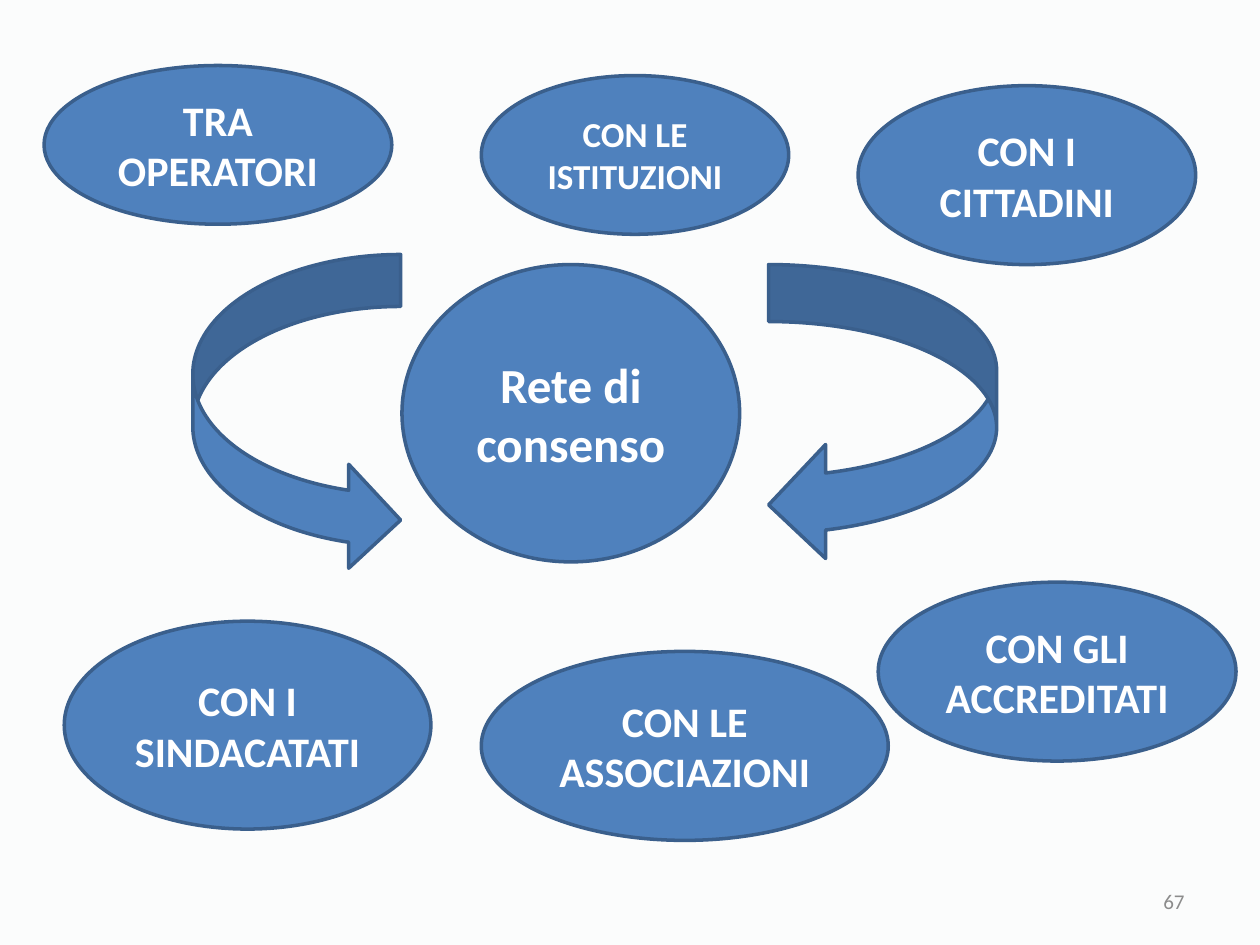
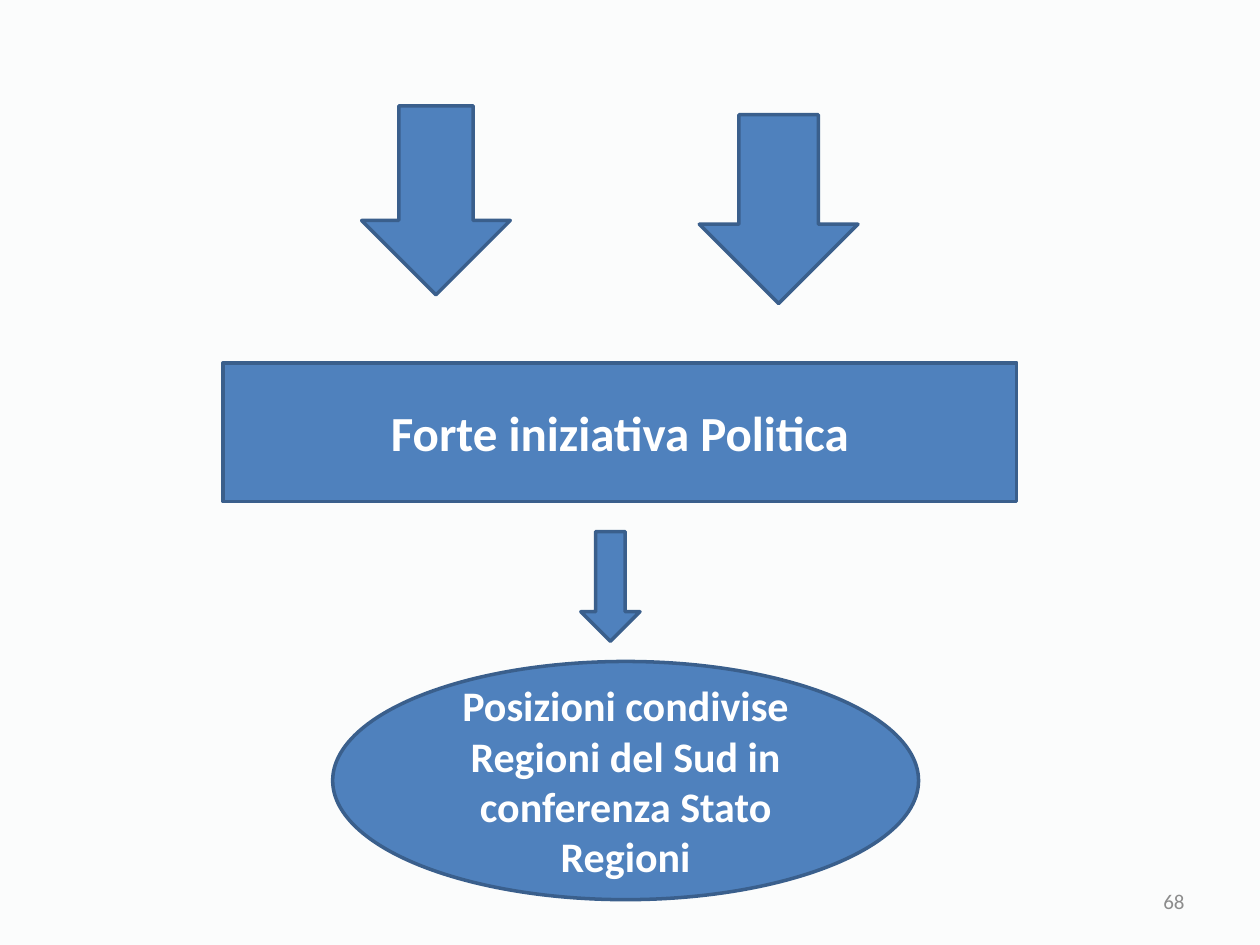
from pptx import Presentation
from pptx.dml.color import RGBColor
from pptx.enum.shapes import MSO_SHAPE as Preset
from pptx.enum.text import MSO_ANCHOR as Anchor, PP_ALIGN as Align
from pptx.util import Inches, Pt

COLORS = {
    "background": "FBFCFC",
    "node": "4F81BD",
    "outline": "3A5F8C",
    "label": "FFFFFF",
    "number": "8C8C8C",
}
FONT = "Calibri"

PARTNERS = [
    (0.35, 0.52, 2.76, 1.26, ["TRA OPERATORI"], 24),
    (3.82, 0.6, 2.44, 1.26, ["CON LE ISTITUZIONI"], 20),
    (6.81, 0.68, 2.68, 1.42, ["CON I CITTADINI"], 24),
    (0.51, 4.93, 2.91, 1.65, ["CON I", "SINDACATATI"], 24),
    (3.82, 5.17, 3.23, 1.5, ["CON LE ASSOCIAZIONI"], 24),
    (6.97, 4.62, 2.84, 1.42, ["CON GLI ACCREDITATI"], 24),
]


def color(key):
    return RGBColor.from_string(COLORS[key])


def write(frame, lines, size, color_key, align, bold=False):
    frame.word_wrap = True
    frame.vertical_anchor = Anchor.MIDDLE
    for index, line in enumerate(lines):
        paragraph = frame.add_paragraph() if index else frame.paragraphs[0]
        paragraph.alignment = align
        run = paragraph.add_run()
        run.text = line
        run.font.name = FONT
        run.font.size = Pt(size)
        run.font.bold = bold
        run.font.color.rgb = color(color_key)


def add_node(slide, preset, left, top, width, height, lines=(), size=24):
    node = slide.shapes.add_shape(
        preset, Inches(left), Inches(top), Inches(width), Inches(height))
    node.shadow.inherit = False
    node.fill.solid()
    node.fill.fore_color.rgb = color("node")
    node.line.color.rgb = color("outline")
    node.line.width = Pt(2)
    write(node.text_frame, lines, size, "label", Align.CENTER, bold=True)


def add_numbered_slide(deck, number):
    slide = deck.slides.add_slide(deck.slide_layouts[6])
    slide.background.fill.solid()
    slide.background.fill.fore_color.rgb = color("background")
    page_number = slide.shapes.add_textbox(
        Inches(7.17), Inches(6.95), Inches(2.33), Inches(0.4))
    write(page_number.text_frame, [str(number)], 12, "number", Align.RIGHT)
    return slide


def build_consensus_network(deck):
    slide = add_numbered_slide(deck, 67)
    add_node(slide, Preset.CURVED_RIGHT_ARROW, 1.53, 2.02, 1.65, 2.52)
    add_node(slide, Preset.CURVED_LEFT_ARROW, 6.1, 2.1, 1.81, 2.36)
    add_node(slide, Preset.OVAL, 3.19, 2.1, 2.68, 2.36, ["Rete di consenso"], 28)
    for partner in PARTNERS:
        add_node(slide, Preset.OVAL, *partner)


def build_political_initiative(deck):
    slide = add_numbered_slide(deck, 68)
    for arrow in [(2.87, 0.84, 1.18, 1.5), (5.55, 0.91, 1.26, 1.5),
                  (4.61, 4.22, 0.47, 0.87)]:
        add_node(slide, Preset.DOWN_ARROW, *arrow)
    add_node(slide, Preset.RECTANGLE, 1.77, 2.88, 6.3, 1.1,
             ["Forte iniziativa Politica"], 28)
    add_node(slide, Preset.OVAL, 2.64, 5.25, 4.65, 1.89,
             ["Posizioni condivise Regioni del Sud in conferenza Stato Regioni"])


def main():
    deck = Presentation()
    deck.slide_width = Inches(10)
    deck.slide_height = Inches(7.5)
    build_consensus_network(deck)
    build_political_initiative(deck)
    deck.save("out.pptx")


if __name__ == "__main__":
    main()
